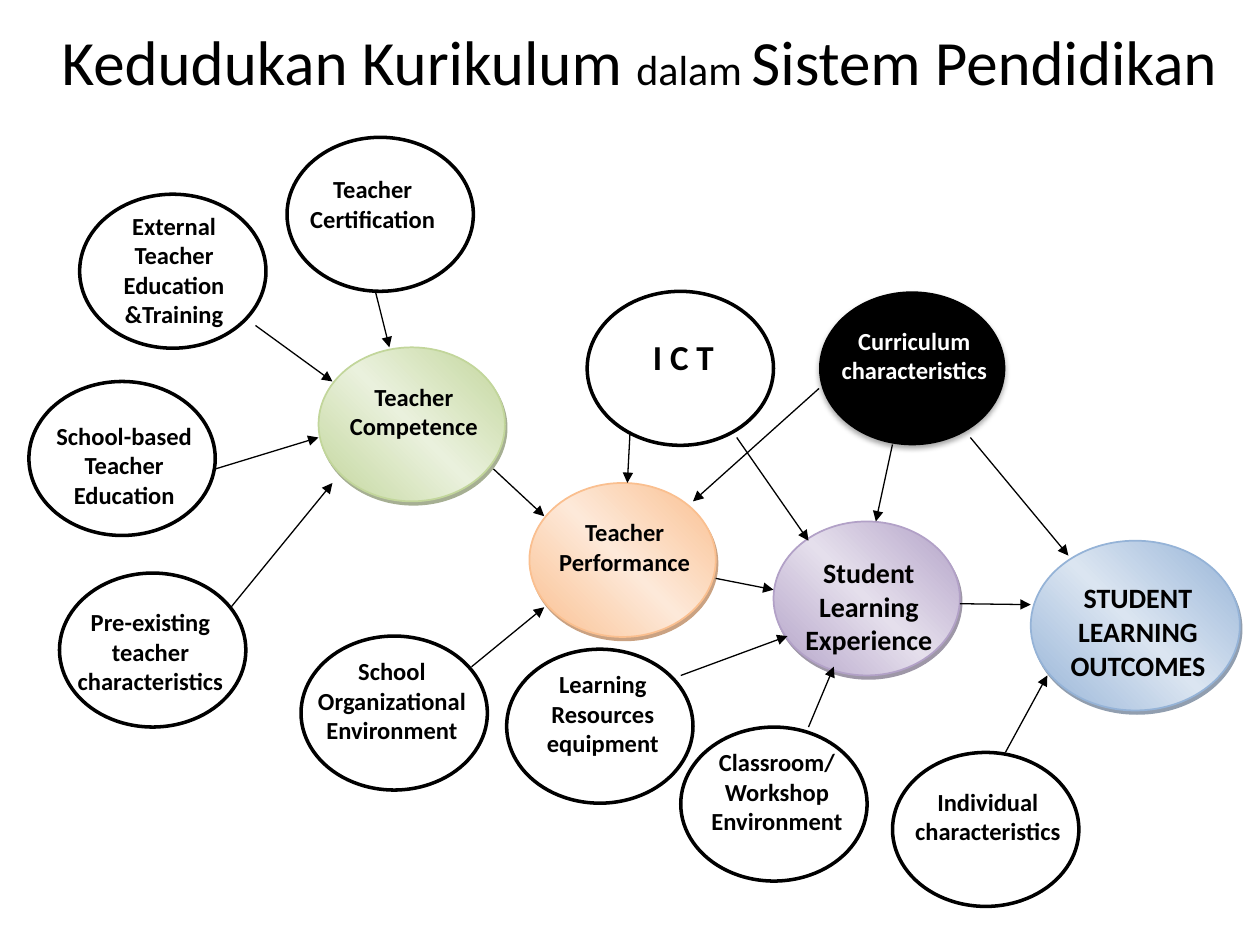
from copy import deepcopy

from lxml import etree
from pptx import Presentation
from pptx.dml.color import RGBColor
from pptx.enum.shapes import MSO_CONNECTOR, MSO_SHAPE
from pptx.enum.text import MSO_ANCHOR, PP_ALIGN
from pptx.oxml.ns import qn
from pptx.util import Pt

STRAIGHT = MSO_CONNECTOR.STRAIGHT
ELLIPSE = MSO_SHAPE.OVAL
MIDDLE = MSO_ANCHOR.MIDDLE
CENTER, RIGHT = PP_ALIGN.CENTER, PP_ALIGN.RIGHT
FONT = "Calibri"
OVAL = (106.5, 88)
LABEL = (8.5, 19.5, 92)  # offset from the oval, then width

# text, left, top, label box
FACTORS = [
    ("Individual characteristics", 510, 430, LABEL),
    ("Classroom/ Workshop Environment", 389, 415.5, (3.5, 11.5, 103)),
    ("School Organizational Environment", 172, 363.5, (6, 11.5, 92)),
    ("External Teacher Education &Training", 45.5, 111, (8, 9.5, 92)),
    ("School-based Teacher Education", 16.5, 218, (8.5, 22.5, 92)),
    ("Pre-existing teacher characteristics", 34, 327.5, (6, 19.5, 92)),
    ("Teacher Certification", 164, 78.5, (3, 21, 92)),
    ("Learning\nResources\nequipment", 289.5, 371, (3.5, 11.5, 103)),
]

# text, left, top, size, label box, text size, edge, middle, shadow
STAGES = [
    ("Teacher Competence", 182, 198.5, OVAL, LABEL, 14,
     "C2D69B", "EAF1DD", "4E6128"),
    ("Teacher Performance", 302.5, 276, OVAL, LABEL, 14,
     "FABF8F", "FDE9D9", "974706"),
    ("Student Learning Experience", 442, 298, OVAL, LABEL, 16,
     "B2A1C7", "E5DFEC", "3F3151"),
    ("STUDENT LEARNING OUTCOMES", 589, 309, (119.5, 97), (9.5, 23, 103.5), 16,
     "95B3D7", "DBE5F1", "243F60"),
]

ARROWS = [
    # into Teacher Competence
    (146, 186, 190, 218), (123, 268, 182, 250),
    (132, 347, 190, 276), (214.5, 166.5, 222.5, 198.5),
    # into Teacher Performance
    (282, 268, 311, 295), (269.5, 381, 311, 347),
    (468, 222, 396, 286.5), (360, 247.5, 358.5, 276),
    # into Student Learning Experience
    (409, 330.5, 442, 337), (510, 254, 500.5, 298), (462, 415.5, 476.5, 381),
    (389, 386, 450, 363.5), (421, 250, 462, 309),
    # into Student Learning Outcomes
    (554.5, 250, 610.5, 317.5), (548.5, 345, 589, 345.5),
    (574.5, 430, 598.5, 386),
]


def rgb(hex_color):
    return RGBColor.from_string(hex_color)


def style(font, size, color="000000", bold=False):
    font.name, font.size, font.bold = FONT, Pt(size), bold
    font.color.rgb = rgb(color)


def add_title(slide, x, y, w, h):
    s = slide.shapes.title
    s.left, s.top, s.width, s.height = Pt(x), Pt(y), Pt(w), Pt(h)
    tf = s.text_frame
    tf.vertical_anchor = MIDDLE
    p = tf.paragraphs[0]
    p.alignment = RIGHT
    for text, size in (("Kedudukan Kurikulum ", 36), ("dalam ", 24),
                       ("Sistem Pendidikan", 36)):
        r = p.add_run()
        r.text = text
        style(r.font, size)


def add_shadow(sp, color, alpha, blur, dist, angle):
    effects = sp._element.spPr.find(qn("a:effectLst"))
    shadow = etree.SubElement(
        effects, qn("a:outerShdw"), blurRad=str(Pt(blur)), dist=str(Pt(dist)),
        dir=str(angle * 60000), algn="ctr", rotWithShape="0")
    clr = etree.SubElement(shadow, qn("a:srgbClr"), val=color)
    etree.SubElement(clr, qn("a:alpha"), val=str(alpha * 1000))


def fill_band(sp, edge, middle):
    """Fill with a diagonal gradient that is lightest in the middle."""
    fill = sp.fill
    fill.gradient()
    fill.gradient_angle = 45
    first = sp._element.spPr.find(qn("a:gradFill")).find(qn("a:gsLst"))[0]
    first.addnext(deepcopy(first))
    for stop, pos, color in zip(fill.gradient_stops, (0, 0.5, 1),
                                (edge, middle, edge)):
        stop.position = pos
        stop.color.rgb = rgb(color)


def add_oval(slide, x, y, size=OVAL, fill=None, line=None, width=2):
    sp = slide.shapes.add_shape(ELLIPSE, Pt(x), Pt(y), Pt(size[0]), Pt(size[1]))
    sp.shadow.inherit = False
    if fill:
        sp.fill.solid()
        sp.fill.fore_color.rgb = rgb(fill)
    if line:
        sp.line.color.rgb = rgb(line)
        sp.line.width = Pt(width)
    else:
        sp.line.fill.background()
    return sp


def add_label(slide, x, y, text, box, size=14, color="000000"):
    dx, dy, w = box
    tf = slide.shapes.add_textbox(Pt(x + dx), Pt(y + dy), Pt(w), Pt(63)).text_frame
    tf.word_wrap = True
    tf.margin_left = tf.margin_top = tf.margin_right = tf.margin_bottom = 0
    tf.text = text
    for p in tf.paragraphs:
        p.alignment = CENTER
        style(p.runs[0].font, size, color, True)


def add_factor(slide, text, x, y, box, size=14):
    add_oval(slide, x, y, fill="FFFFFF", line="000000")
    add_label(slide, x, y, text, box, size)


def add_stage(slide, text, x, y, oval, box, size, edge, middle, shadow):
    sp = add_oval(slide, x, y, oval, line=edge, width=1)
    fill_band(sp, edge, middle)
    add_shadow(sp, shadow, 50, 0, 2.2, 63)
    add_label(slide, x, y, text, box, size)


def add_curriculum(slide, x, y):
    sp = add_oval(slide, x, y, fill="000000")
    add_shadow(sp, "000000", 35, 3.1, 1.8, 90)
    add_label(slide, x, y, "Curriculum characteristics", LABEL, color="FFFFFF")


def add_arrow(slide, x1, y1, x2, y2):
    c = slide.shapes.add_connector(STRAIGHT, Pt(x1), Pt(y1), Pt(x2), Pt(y2))
    c.line.color.rgb = rgb("000000")
    c.line.width = Pt(0.75)
    etree.SubElement(c.line._get_or_add_ln(), qn("a:tailEnd"), type="triangle")
    etree.SubElement(c._element.spPr, qn("a:effectLst"))


def main():
    prs = Presentation()
    prs.slide_width, prs.slide_height = Pt(720), Pt(540)
    slide = prs.slides.add_slide(prs.slide_layouts[5])
    add_title(slide, 16.5, 11.5, 686, 46)
    for factor in FACTORS:
        add_factor(slide, *factor)
    add_factor(slide, "I C T", 335.5, 166.5, (3.5, 25, 103), 20)
    add_curriculum(slide, 468, 166.5)
    for stage in STAGES:
        add_stage(slide, *stage)
    for arrow in ARROWS:
        add_arrow(slide, *arrow)
    prs.save("out.pptx")


if __name__ == "__main__":
    main()
